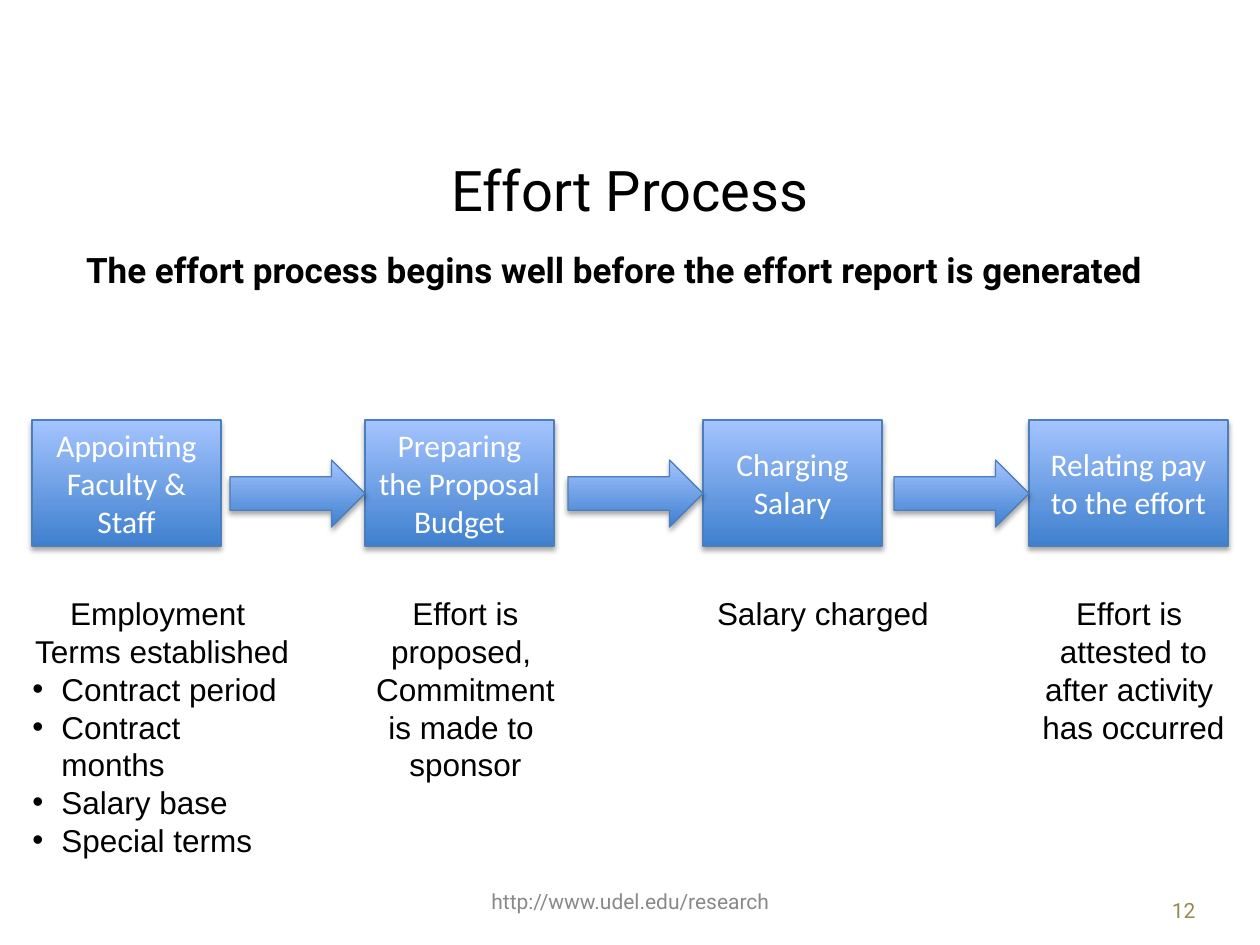
from dataclasses import dataclass

from lxml import etree
from pptx import Presentation
from pptx import util as u
from pptx.dml.color import RGBColor
from pptx.enum import shapes, text
from pptx.oxml import ns

# Content
TITLE = "Effort Process"
SUBTITLE = "The effort process begins well before the effort report is generated"
FOOTER = "http://www.udel.edu/research"
PAGE = "12"

# Each step: box left and width, label, note left and width, note lines, bullets
STEPS = [
    (32, 189, "Appointing Faculty & Staff", 20, 284,
     ["Employment ", "Terms established"],
     ["Contract period", "Contract months", "Salary base", "Special terms"]),
    (365, 189, "Preparing the Proposal Budget", 362, 207,
     ["Effort is", "proposed, ", "Commitment", "is made to ", "sponsor"], []),
    (703, 179, "Charging Salary", 702, 242, ["Salary charged"], []),
    (1029, 199, "Relating pay to the effort", 1028, 211,
     ["Effort is ", "attested to", "after activity ", "has occurred"], []),
]
BOX_TOP, BOX_HEIGHT = 420, 126
ARROW_TOP, ARROW_WIDTH, ARROW_HEIGHT = 460, 135, 67
NOTE_TOP, LINE_HEIGHT = 588, 38
BULLET_INDENT = 29


@dataclass(frozen=True)
class Theme:
    heading: str = "Roboto"
    label: str = "Calibri"
    note: str = "Arial"
    black: str = "000000"
    white: str = "FFFFFF"
    gray: str = "898989"
    tan: str = "948A54"
    outline: str = "4B7EBC"
    gradient: tuple = ("3F80CE", "A4C4FF")
    title_size: int = 32
    subtitle_size: int = 20
    text_size: int = 18
    small_size: int = 12


THEME = Theme()
CENTER = text.PP_ALIGN.CENTER
SHADOW = (
    f'<a:effectLst {ns.nsdecls("a")}><a:outerShdw blurRad="39400" dist="22900" '
    'dir="5400000" rotWithShape="0"><a:srgbClr val="000000">'
    '<a:alpha val="35000"/></a:srgbClr></a:outerShdw></a:effectLst>'
)


def px(value):
    return u.Emu(round(value * 914400 / 126))


def area(*lengths):
    return [px(length) for length in lengths]


def place(shape, *lengths):
    shape.left, shape.top, shape.width, shape.height = area(*lengths)


def set_bullet(paragraph, char=None):
    properties = paragraph._p.get_or_add_pPr()
    indent = px(BULLET_INDENT) if char else 0
    properties.set("marL", str(indent))
    properties.set("indent", str(-indent))
    if char:
        font = etree.SubElement(properties, ns.qn("a:buFont"))
        font.set("typeface", THEME.note)
        etree.SubElement(properties, ns.qn("a:buChar")).set("char", char)
    else:
        etree.SubElement(properties, ns.qn("a:buNone"))


def write(shape, content, *, font, size, color=THEME.black, bold=False,
          align=CENTER, anchor=text.MSO_ANCHOR.MIDDLE, bullets=()):
    frame = shape.text_frame
    frame.word_wrap = True
    frame.auto_size = text.MSO_AUTO_SIZE.NONE
    frame.vertical_anchor = anchor
    lines = [(line, None) for line in content] + [(line, "•") for line in bullets]
    for index, (line, char) in enumerate(lines):
        paragraph = frame.add_paragraph() if index else frame.paragraphs[0]
        paragraph.alignment = text.PP_ALIGN.LEFT if char else align
        paragraph.space_before = u.Pt(0)
        set_bullet(paragraph, char)
        run = paragraph.add_run()
        run.text = line
        run.font.name, run.font.size, run.font.bold = font, u.Pt(size), bold
        run.font.color.rgb = RGBColor.from_string(color)


def add_block(slide, kind, *lengths):
    shape = slide.shapes.add_shape(kind, *area(*lengths))
    shape.fill.gradient()
    shape.fill.gradient_angle = 90
    for stop, color, position in zip(shape.fill.gradient_stops, THEME.gradient, (0, 1)):
        stop.color.rgb = RGBColor.from_string(color)
        stop.position = position
    shape.line.color.rgb = RGBColor.from_string(THEME.outline)
    shape.line.width = u.Pt(0.75)
    shape._element.spPr.append(etree.fromstring(SHADOW))
    return shape


def main():
    presentation = Presentation()
    presentation.slide_width, presentation.slide_height = area(1260, 945)
    slide = presentation.slides.add_slide(presentation.slide_layouts[1])

    # Title and subtitle
    title, body = slide.placeholders
    place(title, 63, 158, 1134, 63)
    write(title, [TITLE], font=THEME.heading, size=THEME.title_size)
    place(body, 32, 242, 1165, 346)
    write(body, [SUBTITLE], font=THEME.heading, size=THEME.subtitle_size,
          bold=True, anchor=text.MSO_ANCHOR.TOP)

    # Footer and page number
    footer = slide.shapes.add_textbox(*area(431, 876, 399, 50))
    write(footer, [FOOTER], font=THEME.heading, size=THEME.small_size, color=THEME.gray)
    number = slide.shapes.add_textbox(*area(1092, 885, 116, 50))
    write(number, [PAGE], font=THEME.heading, size=THEME.small_size,
          color=THEME.tan, align=text.PP_ALIGN.RIGHT)

    # Process boxes, each with its note below
    for left, width, label, note_left, note_width, lines, bullets in STEPS:
        box = add_block(slide, shapes.MSO_SHAPE.FLOWCHART_PROCESS,
                        left, BOX_TOP, width, BOX_HEIGHT)
        write(box, [label], font=THEME.label, size=THEME.text_size, color=THEME.white)
        note_height = 13 + LINE_HEIGHT * (len(lines) + len(bullets))
        note = slide.shapes.add_textbox(
            *area(note_left, NOTE_TOP, note_width, note_height))
        write(note, lines, font=THEME.note, size=THEME.text_size,
              anchor=text.MSO_ANCHOR.TOP, bullets=bullets)

    # Arrows, each ending at the next box
    for left, *_ in STEPS[1:]:
        add_block(slide, shapes.MSO_SHAPE.RIGHT_ARROW,
                  left - ARROW_WIDTH, ARROW_TOP, ARROW_WIDTH, ARROW_HEIGHT)

    presentation.save("out.pptx")


if __name__ == "__main__":
    main()
